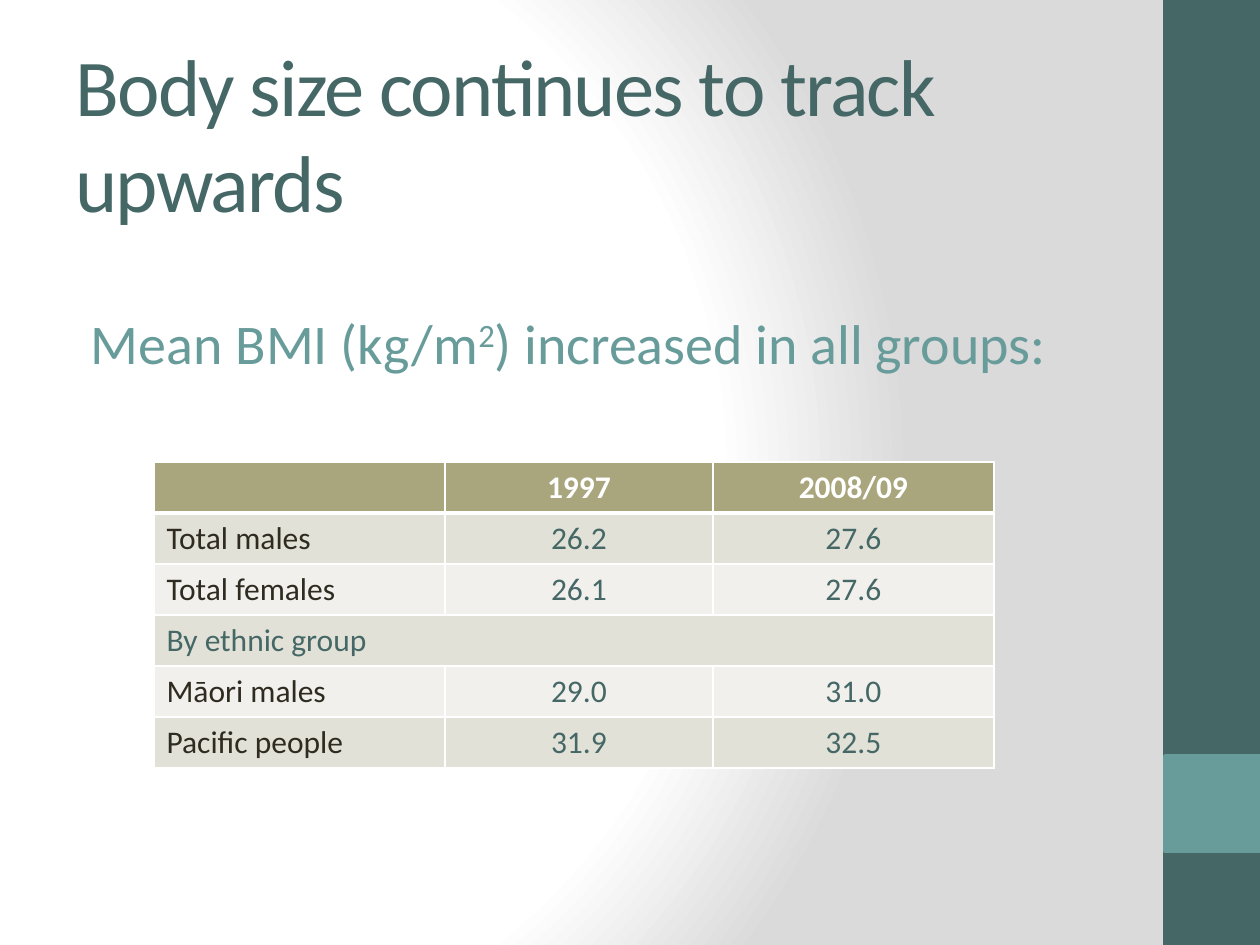
import pptx
import pptx.dml.color
import pptx.enum.shapes
import pptx.enum.text
import pptx.oxml
import pptx.oxml.ns
import pptx.util
from lxml import etree

# Content
TITLE = "Body size continues to track upwards"
LEAD = [("Mean BMI (kg/m", False), ("2", True), (") increased in all groups:", False)]
BMI_ROWS = [
    ("", "1997", "2008/09"),
    ("Total males", "26.2", "27.6"),
    ("Total females", "26.1", "27.6"),
    ("By ethnic group",),
    ("Māori males", "29.0", "31.0"),
    ("Pacific people", "31.9", "32.5"),
]

# Theme and layout, lengths in px
THEME = {
    "font": "Calibri",
    "teal": "456867", "light_teal": "689C9A", "ink": "2F2B20", "white": "FFFFFF",
    "header": "A9A57C", "bands": ("F1F0EC", "E2E1D7"), "shade": "DADADA",
    "title_pt": 46, "lead_pt": 32, "table_pt": 18, "edge_pt": 2,
}
SLIDE_W, SLIDE_H = 1260, 945
SIDEBAR_X, SIDEBAR_W = 1165, 95
ACCENT_Y, ACCENT_H = 756, 95
TITLE_BOX = (63, 38, 1050, 189)
LEAD_BOX = (63, 220, 1050, 662)
LEAD_LEFT, LEAD_TOP = 28, 88
TABLE_X, TABLE_Y, ROW_H = 154, 462, 51
COLUMN_WIDTHS = (291, 268, 281)


def px(length):
    return pptx.util.Emu(round(length * 914400 / 126))


def rgb(colour):
    return pptx.dml.color.RGBColor.from_string(colour)


def add_run(paragraph, text, size, colour, bold=False):
    run = paragraph.add_run()
    run.text = text
    run.font.name = THEME["font"]
    run.font.size = pptx.util.Pt(size)
    run.font.color.rgb = rgb(colour)
    run.font.bold = bold
    return run


def add_text_box(slide, box):
    frame = slide.shapes.add_textbox(*map(px, box)).text_frame
    frame.word_wrap = True
    return frame


def add_block(slide, box, colour):
    block = slide.shapes.add_shape(pptx.enum.shapes.MSO_SHAPE.RECTANGLE, *map(px, box))
    block.shadow.inherit = False
    block.fill.solid()
    block.fill.fore_color.rgb = rgb(colour)
    block.line.color.rgb = rgb(colour)
    block.line.width = pptx.util.Pt(THEME["edge_pt"])


def paint_background(slide):
    slide.background.fill.gradient()
    gradient = next(slide.element.iter(pptx.oxml.ns.qn("a:gradFill")))
    stops = "".join(
        f'<a:gs pos="{pos}000"><a:srgbClr val="{colour}"/></a:gs>'
        for pos, colour in ((0, THEME["white"]), (75, THEME["white"]), (100, THEME["shade"]))
    )
    radial = pptx.oxml.parse_xml(
        f'<a:gradFill {pptx.oxml.ns.nsdecls("a")} rotWithShape="1"><a:gsLst>{stops}</a:gsLst>'
        '<a:path path="circle"><a:fillToRect l="20000" t="50000" r="100000" b="50000"/>'
        '</a:path></a:gradFill>'
    )
    gradient.getparent().replace(gradient, radial)


def add_borders(cell, bottom_pt):
    properties = cell._tc.get_or_add_tcPr()
    for side, width in (("L", 1), ("R", 1), ("T", 1), ("B", bottom_pt)):
        border = etree.SubElement(
            properties, pptx.oxml.ns.qn(f"a:ln{side}"), w=str(pptx.util.Pt(width)))
        fill = etree.SubElement(border, pptx.oxml.ns.qn("a:solidFill"))
        etree.SubElement(fill, pptx.oxml.ns.qn("a:srgbClr"), val=THEME["white"])


def add_bmi_table(slide):
    table = slide.shapes.add_table(
        len(BMI_ROWS), len(COLUMN_WIDTHS), px(TABLE_X), px(TABLE_Y),
        px(sum(COLUMN_WIDTHS)), px(ROW_H * len(BMI_ROWS))).table
    for column, width in zip(table.columns, COLUMN_WIDTHS):
        column.width = px(width)
    for r, values in enumerate(BMI_ROWS):
        table.rows[r].height = px(ROW_H)
        is_header, is_group = r == 0, len(values) == 1
        if is_group:
            table.cell(r, 0).merge(table.cell(r, len(COLUMN_WIDTHS) - 1))
        for c in range(len(COLUMN_WIDTHS)):
            cell = table.cell(r, c)
            add_borders(cell, 3 if is_header else 1)
            cell.fill.solid()
            cell.fill.fore_color.rgb = rgb(
                THEME["header"] if is_header else THEME["bands"][r % 2])
            if c >= len(values):
                continue
            paragraph = cell.text_frame.paragraphs[0]
            if c > 0:
                paragraph.alignment = pptx.enum.text.PP_ALIGN.CENTER
            if is_header:
                colour = THEME["white"]
            else:
                colour = THEME["teal"] if c > 0 or is_group else THEME["ink"]
            if values[c]:
                add_run(paragraph, values[c], THEME["table_pt"], colour, is_header)


def main():
    deck = pptx.Presentation()
    deck.slide_width, deck.slide_height = px(SLIDE_W), px(SLIDE_H)
    slide = deck.slides.add_slide(deck.slide_layouts[6])

    # Background and sidebar
    paint_background(slide)
    add_block(slide, (SIDEBAR_X, 0, SIDEBAR_W, SLIDE_H), THEME["teal"])
    add_block(slide, (SIDEBAR_X, ACCENT_Y, SIDEBAR_W, ACCENT_H), THEME["light_teal"])

    # Title
    title = add_text_box(slide, TITLE_BOX)
    title.vertical_anchor = pptx.enum.text.MSO_ANCHOR.MIDDLE
    heading = add_run(title.paragraphs[0], TITLE, THEME["title_pt"], THEME["teal"])
    heading.font._element.set("spc", "-100")

    # Lead sentence
    lead = add_text_box(slide, LEAD_BOX)
    lead.margin_left, lead.margin_top = px(LEAD_LEFT), px(LEAD_TOP)
    for text, is_superscript in LEAD:
        run = add_run(lead.paragraphs[0], text, THEME["lead_pt"], THEME["light_teal"])
        if is_superscript:
            run.font._element.set("baseline", "30000")

    # BMI table
    add_bmi_table(slide)
    deck.save("out.pptx")


if __name__ == "__main__":
    main()
